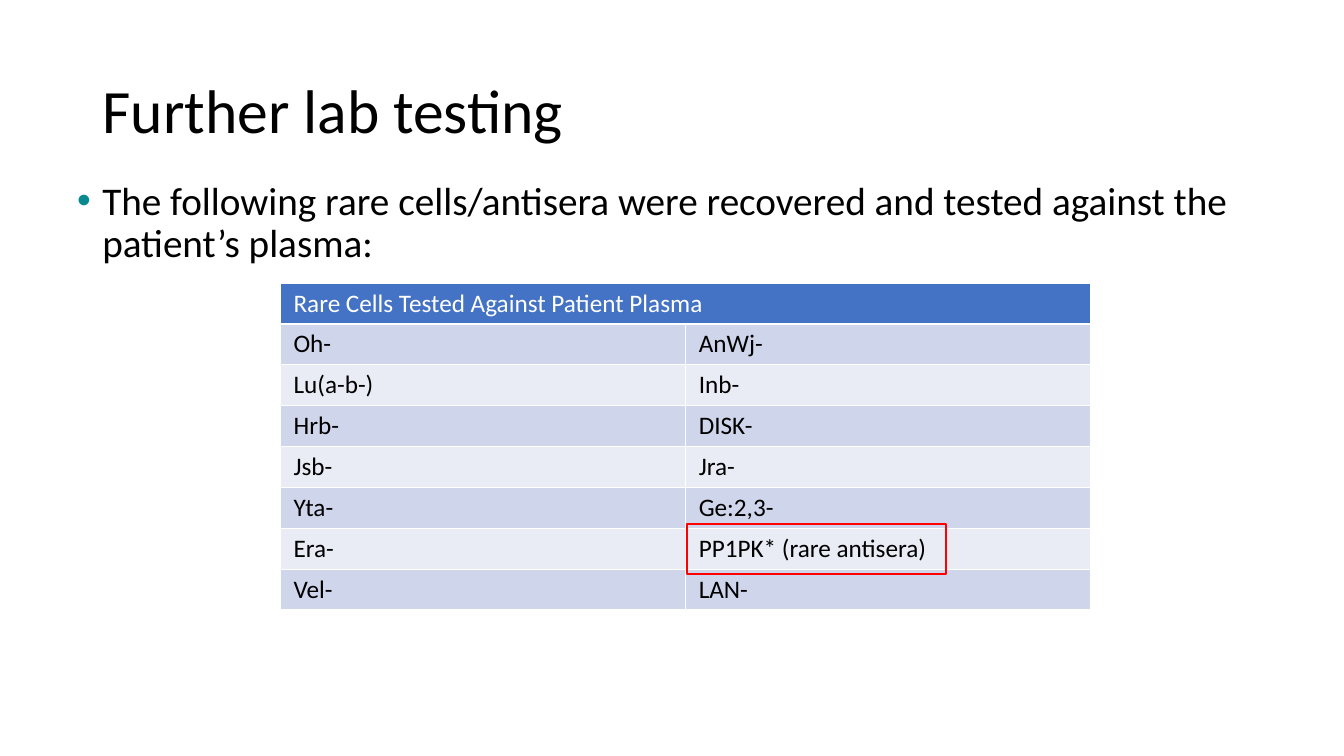
from dataclasses import dataclass

from lxml import etree
from pptx import Presentation
from pptx.dml.color import RGBColor
from pptx.enum import shapes, text
from pptx.oxml.ns import qn
from pptx.util import Pt


@dataclass(frozen=True)
class Theme:
    font: str = "Calibri"
    ink: str = "000000"
    paper: str = "FFFFFF"
    bullet: str = "068A90"
    header: str = "4472C4"
    bands: tuple = ("CFD5EA", "E9EBF5")
    highlight: str = "FF0000"
    title_size: int = 44
    body_size: int = 28
    table_size: int = 18


class SlideBuilder:
    def __init__(self, page, theme):
        self.page = page
        self.theme = theme

    def style(self, para, size, color):
        para.font.name = self.theme.font
        para.font.size = Pt(size)
        para.font.bold = False
        para.font.color.rgb = RGBColor.from_string(color)

    def title(self, words, left, top, width, height):
        box = self.page.shapes.title
        box.left, box.top, box.width, box.height = map(Pt, (left, top, width, height))
        frame = box.text_frame
        frame.text = words
        frame.auto_size = text.MSO_AUTO_SIZE.NONE
        frame.vertical_anchor = text.MSO_ANCHOR.MIDDLE
        para = frame.paragraphs[0]
        para.alignment = text.PP_ALIGN.LEFT
        para.line_spacing = 0.9
        self.style(para, self.theme.title_size, self.theme.ink)

    def bullet(self, words, left, top, width, height, indent=18):
        box = self.page.shapes.add_textbox(*map(Pt, (left, top, width, height)))
        frame = box.text_frame
        frame.word_wrap = True
        para = frame.paragraphs[0]
        para.text = words
        para.line_spacing = 0.9
        properties = para._p.get_or_add_pPr()
        properties.set("marL", str(Pt(indent)))
        properties.set("indent", str(-Pt(indent)))
        color = etree.SubElement(properties, qn("a:buClr"))
        etree.SubElement(color, qn("a:srgbClr"), val=self.theme.bullet)
        etree.SubElement(properties, qn("a:buFont"), typeface="Arial")
        etree.SubElement(properties, qn("a:buChar"), char="•")
        self.style(para, self.theme.body_size, self.theme.ink)

    def cell(self, cell, words, fill, color):
        cell.fill.solid()
        cell.fill.fore_color.rgb = RGBColor.from_string(fill)
        cell.margin_left = cell.margin_right = Pt(9.3)
        cell.margin_top = cell.margin_bottom = Pt(3.6)
        cell.text = words
        self.style(cell.text_frame.paragraphs[0], self.theme.table_size, color)

    def table(self, heading, rows, left, top, width, row_height):
        count, columns = len(rows) + 1, len(rows[0])
        frame = self.page.shapes.add_table(
            count, columns, *map(Pt, (left, top, width, row_height * count)))
        grid = frame.table
        # Heading across all columns
        grid.cell(0, 0).merge(grid.cell(0, columns - 1))
        self.cell(grid.cell(0, 0), heading, self.theme.header, self.theme.paper)
        # Banded rows
        for row, values in enumerate(rows):
            band = self.theme.bands[row % 2]
            for column, value in enumerate(values):
                self.cell(grid.cell(row + 1, column), value, band, self.theme.ink)

    def highlight(self, left, top, width, height):
        box = self.page.shapes.add_shape(
            shapes.MSO_SHAPE.RECTANGLE, *map(Pt, (left, top, width, height)))
        box.shadow.inherit = False
        box.fill.background()
        box.line.color.rgb = RGBColor.from_string(self.theme.highlight)
        box.line.width = Pt(1.5)


RARE_CELLS = [
    ("Oh-", "AnWj-"),
    ("Lu(a-b-)", "Inb-"),
    ("Hrb-", "DISK-"),
    ("Jsb-", "Jra-"),
    ("Yta-", "Ge:2,3-"),
    ("Era-", "PP1PK* (rare antisera)"),
    ("Vel-", "LAN-"),
]


def main():
    deck = Presentation()
    deck.slide_width, deck.slide_height = Pt(960), Pt(540)
    page = deck.slides.add_slide(deck.slide_layouts[5])
    builder = SlideBuilder(page, Theme())

    # Title and introduction
    builder.title("Further lab testing", 66, 28.75, 828, 104.4)
    builder.bullet("The following rare cells/antisera were recovered and tested "
                   "against the patient’s plasma:", 48, 126, 864, 388)

    # Results table with the rare antisera marked
    builder.table("Rare Cells Tested Against Patient Plasma", RARE_CELLS,
                  200.4, 202.2, 579, 29.2)
    builder.highlight(490.5, 374.4, 185, 35.5)

    deck.save("out.pptx")


if __name__ == "__main__":
    main()
